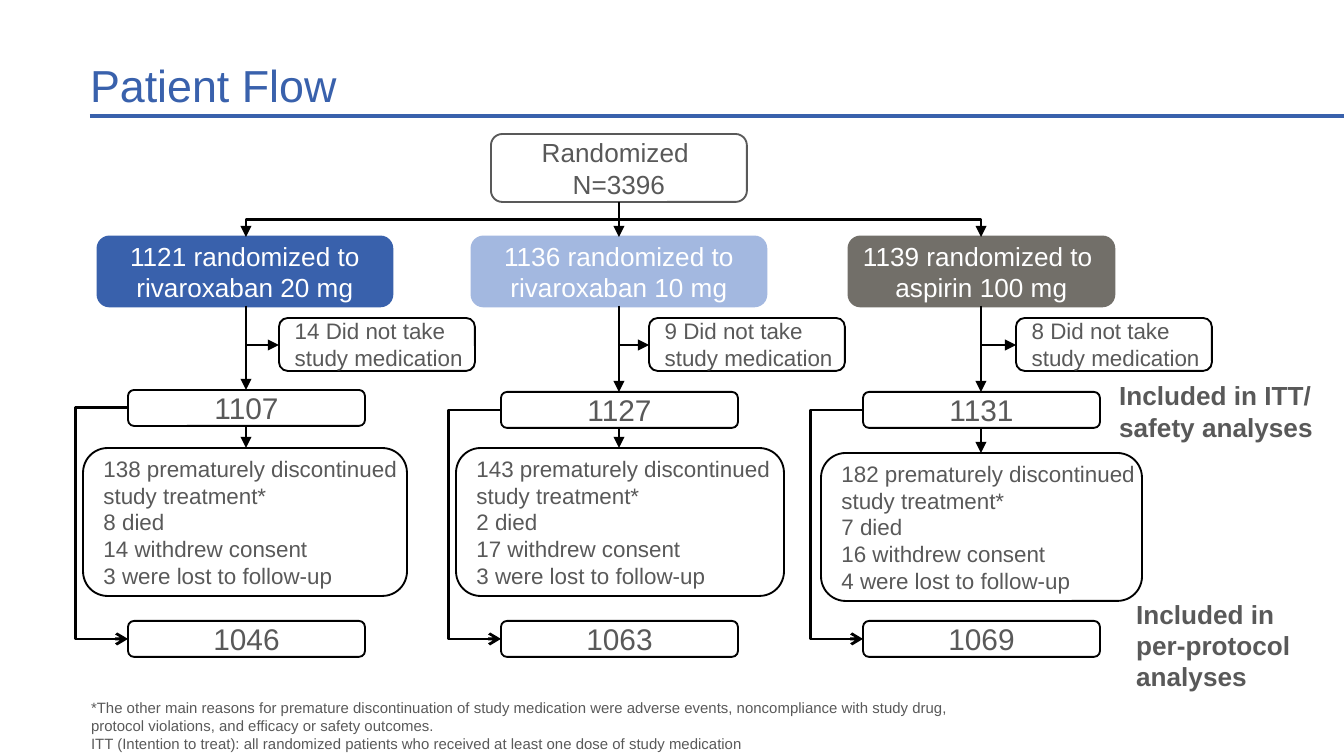
from lxml import etree
from pptx import Presentation
from pptx import util as u
from pptx.dml.color import RGBColor
from pptx.enum import shapes, text
from pptx.oxml.ns import qn

SCALE = 914400 / 134.4  # EMU per px
COLORS = {
    "blue": "3961AC", "light": "A3B8E0", "taupe": "726F69",
    "ink": "595959", "black": "000000", "white": "FFFFFF",
}
CENTER, LEFT = text.PP_ALIGN.CENTER, text.PP_ALIGN.LEFT
MIDDLE, BOTTOM = text.MSO_ANCHOR.MIDDLE, text.MSO_ANCHOR.BOTTOM

COUNT_W, COUNT_H = 237, 36
ARM_Y, ARM_H = 237, 69
SKIP_Y, SKIP_W, SKIP_H = 318, 196, 53
PROTOCOL_Y = 621

# One column per treatment arm; boxes are (left, width) or (left, top, width)
ARMS = [
    dict(cx=246, color="blue", label="1121 randomized to rivaroxaban 20 mg",
         wrap=True, arm=(98, 294), skip_x=279, skipped=14, itt_y=390, itt=1107,
         drop=(83, 448, 324), lost=(138, 8, 14, 3), protocol=1046),
    dict(cx=619, color="light", label="1136 randomized to rivaroxaban 10 mg",
         wrap=True, arm=(472, 294), skip_x=649, skipped=9, itt_y=392, itt=1127,
         drop=(456, 448, 328), lost=(143, 2, 17, 3), protocol=1063),
    dict(cx=981, color="taupe", label="1139 randomized to \naspirin 100 mg",
         wrap=False, arm=(849, 265), skip_x=1016, skipped=8, itt_y=392, itt=1131,
         drop=(821, 453, 321), lost=(182, 7, 16, 4), protocol=1069),
]


def px(n):
    return u.Emu(round(n * SCALE))


def rgb(name):
    return RGBColor.from_string(COLORS[name])


def write(sp, words, size, color="ink", align=LEFT, anchor=MIDDLE,
          wrap=True, bold=False, inset=None):
    tf = sp.text_frame
    tf.word_wrap = wrap
    tf.vertical_anchor = anchor
    if inset:
        tf.margin_left = tf.margin_right = px(inset[0])
        tf.margin_top = tf.margin_bottom = px(inset[1])
    p = tf.paragraphs[0]
    p.text = words
    p.alignment = align
    p.font.name = "Arial"
    p.font.size = u.Pt(size)
    p.font.bold = bold
    p.font.color.rgb = rgb(color)


def label(s, x, y, w, h, words, size, **style):
    write(s.shapes.add_textbox(px(x), px(y), px(w), px(h)), words, size, **style)


def box(s, x, y, w, h, words, size, fill="white", line="black", weight=1, **style):
    sp = s.shapes.add_shape(shapes.MSO_SHAPE.ROUNDED_RECTANGLE,
                            px(x), px(y), px(w), px(h))
    sp.shadow.inherit = False
    sp.fill.solid()
    sp.fill.fore_color.rgb = rgb(fill)
    sp.line.color.rgb = rgb(line)
    sp.line.width = u.Pt(weight)
    write(sp, words, size, **style)


def connector(s, x1, y1, x2, y2, color="black", weight=1.5, head="triangle",
              kind=shapes.MSO_CONNECTOR.STRAIGHT):
    c = s.shapes.add_connector(kind, px(x1), px(y1), px(x2), px(y2))
    c.line.color.rgb = rgb(color)
    c.line.width = u.Pt(weight)
    if head:
        etree.SubElement(c.line._get_or_add_ln(), qn("a:tailEnd"), type=head)
    etree.SubElement(c._element.spPr, qn("a:effectLst"))
    return c


def elbow(s, x1, y1, x2, y2, preset, rot, flip=None, adj=None, head="triangle"):
    """Bent connector whose frame is turned by rot degrees about its centre."""
    c = connector(s, x1, y1, x2, y2, head=head, kind=shapes.MSO_CONNECTOR.ELBOW)
    w, h = abs(x2 - x1), abs(y2 - y1)
    if rot in (90, 270):
        w, h = h, w
    c.left, c.top = px((x1 + x2 - w) / 2), px((y1 + y2 - h) / 2)
    c.width, c.height = px(w), px(h)
    xfrm = c._element.spPr.find(qn("a:xfrm"))
    for name in ("flipH", "flipV"):
        xfrm.attrib.pop(name, None)
    xfrm.set("rot", str(rot * 60000))
    if flip:
        xfrm.set(flip, "1")
    geom = c._element.spPr.find(qn("a:prstGeom"))
    geom.set("prst", preset)
    if adj:
        guides = geom.find(qn("a:avLst"))
        etree.SubElement(guides, qn("a:gd"), name="adj1", fmla=f"val {adj * 100000}")


def arm_boxes(s, a):
    count_x = a["cx"] - COUNT_W // 2
    arm_x, arm_w = a["arm"]
    drop_x, drop_y, drop_w = a["drop"]
    stopped, died, withdrew, lost = a["lost"]
    box(s, arm_x, ARM_Y, arm_w, ARM_H, a["label"], 14, fill=a["color"],
        line=a["color"], weight=1.5, color="white", align=CENTER,
        wrap=a["wrap"], inset=(11, 5) if a["wrap"] else None)
    box(s, a["skip_x"], SKIP_Y, SKIP_W, SKIP_H,
        f"{a['skipped']} Did not take \nstudy medication", 12, wrap=False)
    for y, count in ((a["itt_y"], a["itt"]), (PROTOCOL_Y, a["protocol"])):
        box(s, count_x, y, COUNT_W, COUNT_H, str(count), 16, align=CENTER, wrap=False)
    box(s, drop_x, drop_y, drop_w, 148,
        f"{stopped} prematurely discontinued\nstudy treatment*\n{died} died \n"
        f"{withdrew} withdrew consent\n{lost} were lost to follow-up", 12, wrap=False)


def arm_arrows(s, a):
    cx, itt_y = a["cx"], a["itt_y"]
    count_x, arm_end = cx - COUNT_W // 2, ARM_Y + ARM_H
    connector(s, cx, arm_end, cx, itt_y)
    connector(s, cx, itt_y + COUNT_H, cx, a["drop"][1])
    elbow(s, cx, arm_end, a["skip_x"], SKIP_Y + SKIP_H // 2 + 1,
          "bentConnector2", 270, "flipH")
    # Loop around the left of the discontinued box
    elbow(s, count_x + 1, itt_y + COUNT_H // 2, count_x, PROTOCOL_Y + COUNT_H // 2,
          "bentConnector3", 180, "flipV", adj=53, head="arrow")


def main():
    prs = Presentation()
    prs.slide_width, prs.slide_height = px(1344), px(756)
    s = prs.slides.add_slide(prs.slide_layouts[6])

    # Title and rule
    connector(s, 90, 116, 1344, 116, color="blue", weight=2.25, head=None)
    label(s, 90, 57, 1218, 54, "Patient Flow", 24, color="blue",
          anchor=BOTTOM, inset=(0, 0))

    # Randomization and the three arms
    box(s, 491, 134, 256, 68, "Randomized \nN=3396", 14, line="ink",
        align=CENTER, wrap=False)
    for a in ARMS:
        arm_boxes(s, a)
        arm_arrows(s, a)

    # Split from randomization to each arm
    left, middle, right = (a["cx"] for a in ARMS)
    connector(s, middle, 202, middle, ARM_Y)
    elbow(s, middle, 202, left, ARM_Y, "bentConnector3", 90)
    elbow(s, middle, 202, right, ARM_Y, "bentConnector3", 270, "flipH")

    # Analysis sets and footnote
    label(s, 1106, 387, 227, 48, "Included in ITT/ safety analyses", 14, bold=True)
    label(s, 1123, 621, 231, 48, "Included in \nper-protocol analyses", 14, bold=True)
    label(s, 91, 698, 864, 54,
          "*The other main reasons for premature discontinuation of study medication "
          "were adverse events, noncompliance with study drug, protocol violations, "
          "and efficacy or safety outcomes. \nITT (Intention to treat): all randomized "
          "patients who received at least one dose of study medication",
          8, anchor=BOTTOM, inset=(0, 0))

    prs.save("out.pptx")


if __name__ == "__main__":
    main()
